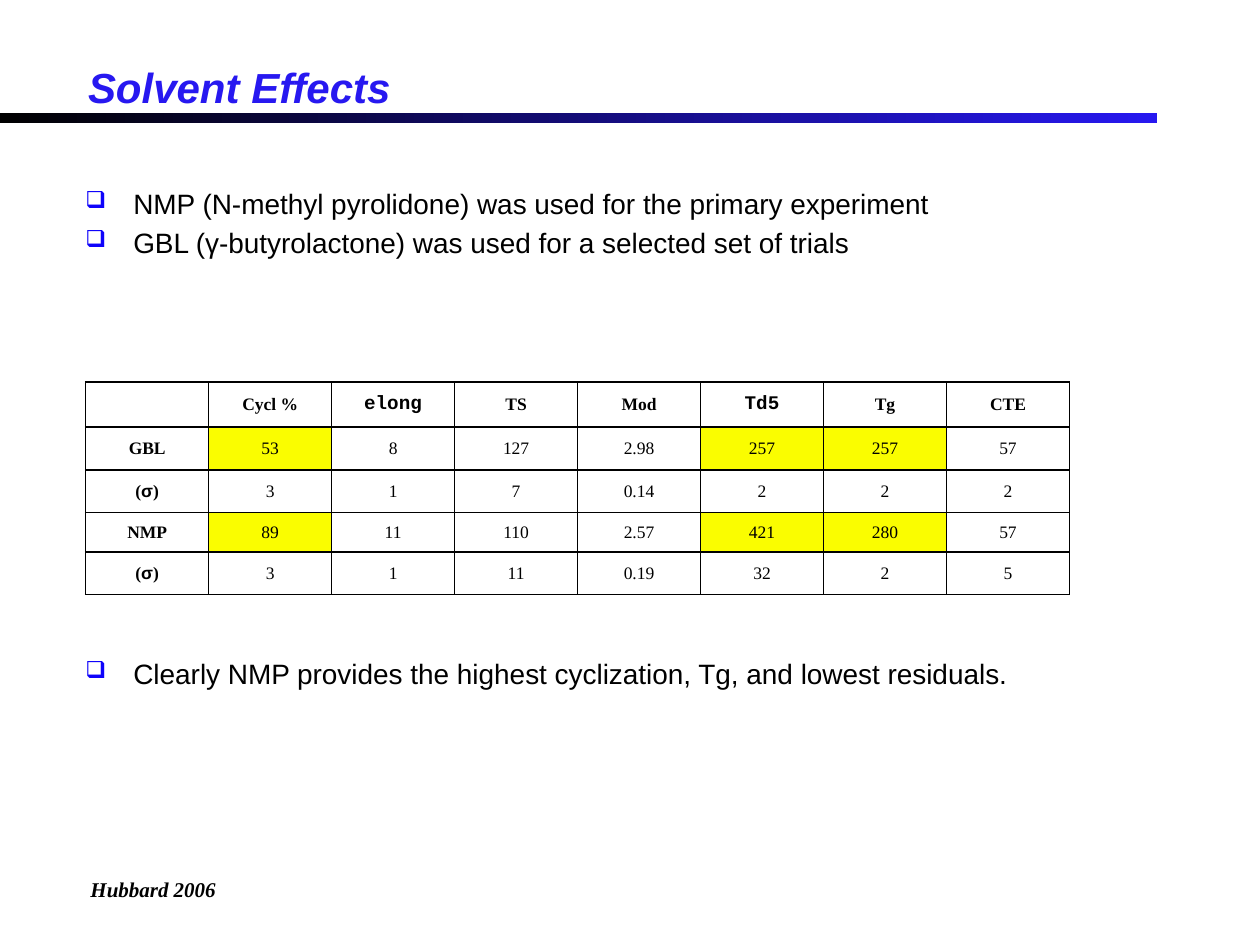
import pptx
import pptx.dml.color
import pptx.enum.shapes
import pptx.enum.text
import pptx.oxml
import pptx.oxml.ns
import pptx.util

Inches = pptx.util.Inches
Pt = pptx.util.Pt
RGBColor = pptx.dml.color.RGBColor
MIDDLE = pptx.enum.text.MSO_ANCHOR.MIDDLE

BLACK = RGBColor(0x00, 0x00, 0x00)
TITLE_BLUE = RGBColor(0x27, 0x18, 0xF0)
BULLET_BLUE = RGBColor(0x0F, 0x03, 0xFB)
YELLOW = RGBColor(0xFA, 0xFD, 0x00)
SANS = "Arial"
SERIF = "Times New Roman"
MONO = "Courier New"

HEADER = ["", "Cycl %", "elong", "TS", "Mod", "Td5", "Tg", "CTE"]
RESULTS = [
    ["GBL", "53", "8", "127", "2.98", "257", "257", "57"],
    ["(σ)", "3", "1", "7", "0.14", "2", "2", "2"],
    ["NMP", "89", "11", "110", "2.57", "421", "280", "57"],
    ["(σ)", "3", "1", "11", "0.19", "32", "2", "5"],
]
ROW_HEIGHTS = [0.36, 0.34, 0.34, 0.31, 0.34]
COLUMN_WIDTH = 0.976
MONO_HEADINGS = {"elong", "Td5"}
HIGHLIGHTED_ROWS = {"GBL", "NMP"}
HIGHLIGHTED_COLUMNS = {"Cycl %", "Td5", "Tg"}


class SlideBuilder:
    def __init__(self, slide):
        self.slide = slide

    def style(self, paragraph, size, name, color=BLACK, bold=False, italic=False):
        font = paragraph.font
        font.size = Pt(size)
        font.name = name
        font.color.rgb = color
        font.bold = bold
        font.italic = italic

    def text_frame(self, left, top, width, height, wrap=True):
        box = self.slide.shapes.add_textbox(
            Inches(left), Inches(top), Inches(width), Inches(height))
        box.text_frame.word_wrap = wrap
        return box.text_frame

    def line_of_text(self, text, area, size, name, color, wrap=True):
        frame = self.text_frame(*area, wrap=wrap)
        frame.vertical_anchor = MIDDLE
        paragraph = frame.paragraphs[0]
        paragraph.text = text
        self.style(paragraph, size, name, color, bold=True, italic=True)

    def gradient_bar(self, left, top, width, height):
        bar = self.slide.shapes.add_shape(
            pptx.enum.shapes.MSO_SHAPE.RECTANGLE,
            Inches(left), Inches(top), Inches(width), Inches(height))
        bar.shadow.inherit = False
        bar.line.fill.background()
        bar.fill.gradient()
        bar.fill.gradient_angle = 0
        for stop, color in zip(bar.fill.gradient_stops, (BLACK, TITLE_BLUE)):
            stop.color.rgb = color

    def bullets(self, texts, left, top, width, height):
        frame = self.text_frame(left, top, width, height)
        for index, text in enumerate(texts):
            paragraph = frame.add_paragraph() if index else frame.paragraphs[0]
            paragraph.text = text
            self.add_bullet(paragraph)
            if index:
                paragraph.space_before = Pt(3.2)
            self.style(paragraph, 16, SANS)

    def add_bullet(self, paragraph):
        properties = paragraph._p.get_or_add_pPr()
        properties.set("marL", str(Inches(0.38)))
        properties.set("indent", str(Inches(-0.38)))
        namespace = pptx.oxml.ns.nsdecls("a")
        for markup in (
            f'<a:buClr {namespace}><a:srgbClr val="{BULLET_BLUE}"/></a:buClr>',
            f'<a:buSzPct {namespace} val="84000"/>',
            f'<a:buChar {namespace} char="❑"/>',
        ):
            properties.append(pptx.oxml.parse_xml(markup))

    def results_table(self, left, top):
        rows = [HEADER] + RESULTS
        table = self.slide.shapes.add_table(
            len(rows), len(HEADER), Inches(left), Inches(top),
            Inches(COLUMN_WIDTH * len(HEADER)), Inches(sum(ROW_HEIGHTS))).table
        table.first_row = False
        table.horz_banding = False
        for column in table.columns:
            column.width = Inches(COLUMN_WIDTH)
        for row, height in zip(table.rows, ROW_HEIGHTS):
            row.height = Inches(height)
        for row_index, values in enumerate(rows):
            for column_index, value in enumerate(values):
                self.fill_cell(
                    table.cell(row_index, column_index), value,
                    bold=row_index == 0 or column_index == 0,
                    highlighted=values[0] in HIGHLIGHTED_ROWS
                    and HEADER[column_index] in HIGHLIGHTED_COLUMNS)

    def fill_cell(self, cell, value, bold, highlighted):
        cell.vertical_anchor = MIDDLE
        cell.margin_top = cell.margin_bottom = 0
        self.add_borders(cell)
        if highlighted:
            cell.fill.solid()
            cell.fill.fore_color.rgb = YELLOW
        else:
            cell.fill.background()
        paragraph = cell.text_frame.paragraphs[0]
        paragraph.alignment = pptx.enum.text.PP_ALIGN.CENTER
        if value in MONO_HEADINGS:
            self.style(paragraph, 11, MONO, bold=bold)
        else:
            self.style(paragraph, 10, SERIF, bold=bold)
        for part in value if "σ" in value else [value]:
            run = paragraph.add_run()
            run.text = part
            if part == "σ":
                run.font.name = SANS

    def add_borders(self, cell):
        properties = cell._tc.get_or_add_tcPr()
        for side in ("lnL", "lnR", "lnT", "lnB"):
            properties.append(pptx.oxml.parse_xml(
                f'<a:{side} {pptx.oxml.ns.nsdecls("a")} w="{Pt(1)}">'
                f'<a:solidFill><a:srgbClr val="{BLACK}"/></a:solidFill></a:{side}>'))


def main():
    presentation = pptx.Presentation()
    presentation.slide_width = Inches(10)
    presentation.slide_height = Inches(7.5)
    builder = SlideBuilder(
        presentation.slides.add_slide(presentation.slide_layouts[6]))
    builder.gradient_bar(0, 0.9, 9.18, 0.08)
    builder.line_of_text(
        "Hubbard 2006", (0.62, 6.91, 1.2, 0.3), 12, SERIF, BLACK, wrap=False)
    builder.line_of_text(
        "Solvent Effects", (0.6, 0.35, 8.89, 0.67), 24, SANS, TITLE_BLUE)
    builder.bullets([
        "NMP (N-methyl pyrolidone) was used for the primary experiment",
        "GBL (γ-butyrolactone) was used for a selected set of trials",
    ], 0.58, 1.43, 8.28, 0.7)
    builder.results_table(0.68, 3.03)
    builder.bullets([
        "Clearly NMP provides the highest cyclization, Tg, and lowest residuals.",
    ], 0.58, 5.16, 8.28, 0.4)
    presentation.save("out.pptx")


if __name__ == "__main__":
    main()
